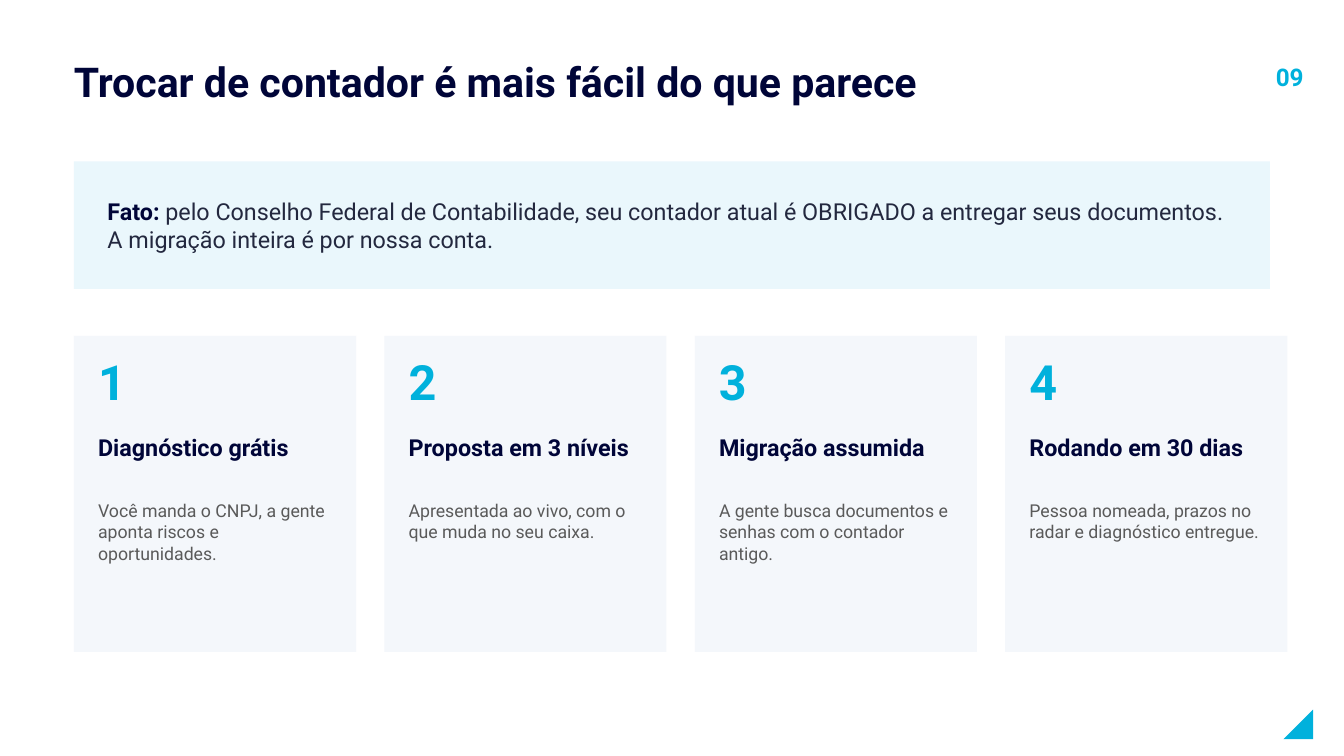
from pptx import Presentation
from pptx.dml.color import RGBColor
from pptx.enum.shapes import MSO_SHAPE
from pptx.enum.text import MSO_ANCHOR, MSO_AUTO_SIZE, PP_ALIGN
from pptx.util import Inches, Pt

FONT = "Roboto"
SLIDE_W = 10
SLIDE_H = SLIDE_W * 9 / 16
COLORS = {
    "navy": "000538",
    "cyan": "00B1DC",
    "ice": "EAF7FC",
    "card": "F4F7FB",
    "ink": "23283F",
    "gray": "5A5A5A",
    "white": "FFFFFF",
}
STEPS = [
    ("Diagnóstico grátis", "Você manda o CNPJ, a gente aponta riscos e oportunidades."),
    ("Proposta em 3 níveis", "Apresentada ao vivo, com o que muda no seu caixa."),
    ("Migração assumida", "A gente busca documentos e senhas com o contador antigo."),
    ("Rodando em 30 dias", "Pessoa nomeada, prazos no radar e diagnóstico entregue."),
]


def rgb(name):
    return RGBColor.from_string(COLORS[name])


def style_run(r, size, color, bold=False):
    r.font.name = FONT
    r.font.size = Pt(size)
    r.font.bold = bold
    r.font.color.rgb = rgb(color)


def prepare_frame(tf, anchor):
    tf.word_wrap = True
    tf.auto_size = MSO_AUTO_SIZE.NONE
    tf.vertical_anchor = anchor
    tf.margin_left = tf.margin_top = tf.margin_right = tf.margin_bottom = 0


def add_text(slide, box, runs, anchor=MSO_ANCHOR.TOP, align=PP_ALIGN.LEFT):
    sp = slide.shapes.add_textbox(*map(Inches, box))
    prepare_frame(sp.text_frame, anchor)
    p = sp.text_frame.paragraphs[0]
    p.alignment = align
    for text, *style in runs:
        r = p.add_run()
        r.text = text
        style_run(r, *style)


def add_block(slide, shape_type, box, color):
    sp = slide.shapes.add_shape(shape_type, *map(Inches, box))
    sp.shadow.inherit = False
    sp.fill.solid()
    sp.fill.fore_color.rgb = rgb(color)
    sp.line.fill.background()
    return sp


def add_title(slide, box, text):
    sp = slide.shapes.title
    sp.left, sp.top, sp.width, sp.height = map(Inches, box)
    tf = sp.text_frame
    tf.text = text
    prepare_frame(tf, MSO_ANCHOR.MIDDLE)
    p = tf.paragraphs[0]
    p.alignment = PP_ALIGN.LEFT
    style_run(p.runs[0], 22, "navy", True)


def add_page_marks(slide, number):
    add_text(slide, (9.1, 0.32, 0.6, 0.5), [(number, 13, "cyan", True)],
             MSO_ANCHOR.MIDDLE, PP_ALIGN.RIGHT)
    corner = add_block(slide, MSO_SHAPE.RIGHT_TRIANGLE, (9.55, 5.28, 0.22, 0.22), "cyan")
    corner._element.spPr.xfrm.set("flipH", "1")


def add_fact(slide, box, label, text):
    x, y, w, h = box
    add_block(slide, MSO_SHAPE.RECTANGLE, box, "ice")
    add_text(slide, (x + 0.25, y + 0.1, w - 0.5, h - 0.2),
             [(label, 12.5, "navy", True), (text, 12.5, "ink")], MSO_ANCHOR.MIDDLE)


def add_step(slide, box, number, heading, text):
    x, y, w, h = box
    left, width = x + 0.18, w - 0.32
    add_block(slide, MSO_SHAPE.RECTANGLE, box, "card")
    add_text(slide, (left, y + 0.12, 1, 0.55), [(str(number), 26, "cyan", True)])
    add_text(slide, (left, y + 0.72, width, 0.42), [(heading, 12.5, "navy", True)])
    add_text(slide, (left, y + 1.22, width, 1), [(text, 9.5, "gray")])


def add_steps(slide, x, y, card_w, card_h, gap):
    for i, (heading, text) in enumerate(STEPS):
        box = (x + i * (card_w + gap), y, card_w, card_h)
        add_step(slide, box, i + 1, heading, text)


def main():
    prs = Presentation()
    prs.slide_width, prs.slide_height = Inches(SLIDE_W), Inches(SLIDE_H)
    slide = prs.slides.add_slide(prs.slide_layouts[5])
    slide.background.fill.solid()
    slide.background.fill.fore_color.rgb = rgb("white")
    add_title(slide, (0.55, 0.3, 8.4, 0.6), "Trocar de contador é mais fácil do que parece")
    add_page_marks(slide, "09")
    add_fact(slide, (0.55, 1.2, 8.9, 0.95), "Fato: ",
             "pelo Conselho Federal de Contabilidade, seu contador atual é OBRIGADO "
             "a entregar seus documentos. A migração inteira é por nossa conta.")
    add_steps(slide, 0.55, 2.5, 2.1, 2.35, 0.21)
    prs.save("out.pptx")


if __name__ == "__main__":
    main()
